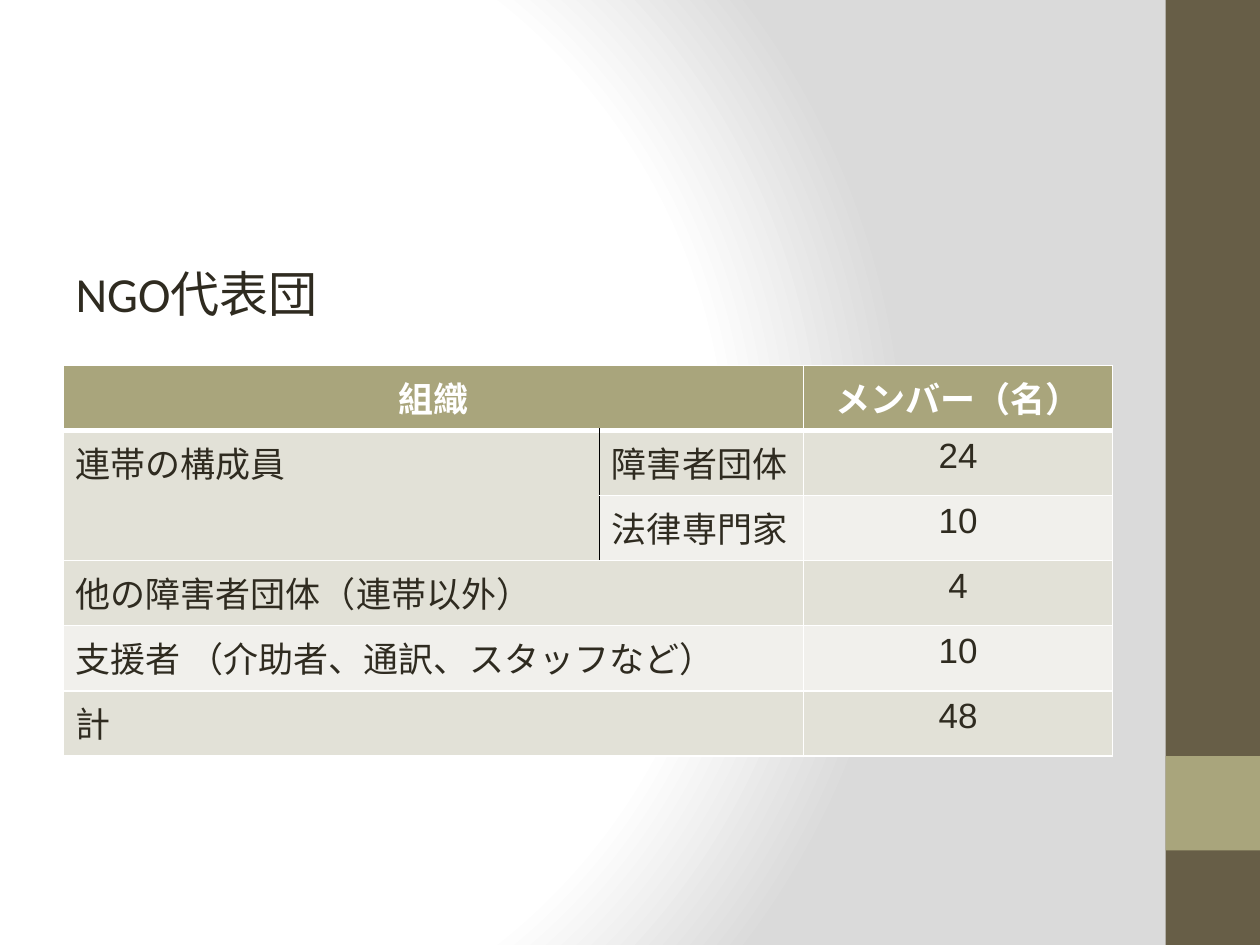
from pptx import Presentation, oxml
from pptx import util as u
from pptx.dml import color
from pptx.enum import shapes, text
from pptx.oxml import ns

COLORS = {"ink": "2F2B20", "white": "FFFFFF", "black": "000000", "edge": "DADADA",
          "brown": "675E47", "olive": "A9A57C", "dark band": "E2E1D7", "light band": "F1F0EC"}
NAMESPACE = ns.nsdecls("a", "p")


def add_run(para, words, size, font, name, bold=False):
    span = para.add_run()
    span.text = words
    span.font.size = u.Pt(size)
    span.font.name = font
    span.font.bold = bold
    span.font.color.rgb = color.RGBColor.from_string(COLORS[name])


def add_borders(cell, borders):
    properties = cell._tc.get_or_add_tcPr()
    for index, side in enumerate("LRTB"):
        name, width = borders.get(side, ("white", 1))
        properties.insert(index, oxml.parse_xml(
            f'<a:ln{side} {NAMESPACE} w="{u.Pt(width)}"><a:solidFill>'
            f'<a:srgbClr val="{COLORS[name]}"/></a:solidFill></a:ln{side}>'))


deck = Presentation()
deck.slide_width, deck.slide_height = u.Pt(720), u.Pt(540)
page = deck.slides.add_slide(deck.slide_layouts[5])

stops = "".join(f'<a:gs pos="{place * 1000}"><a:srgbClr val="{COLORS[name]}"/></a:gs>'
                for place, name in ((0, "white"), (75, "white"), (100, "edge")))
page.element.cSld.insert(0, oxml.parse_xml(
    f'<p:bg {NAMESPACE}><p:bgPr><a:gradFill rotWithShape="1"><a:gsLst>{stops}</a:gsLst>'
    '<a:path path="circle"><a:fillToRect l="20000" t="50000" r="100000" b="50000"/></a:path>'
    '</a:gradFill><a:effectLst/></p:bgPr></p:bg>'))

for top, height, name in ((0, 540, "brown"), (432, 54, "olive")):
    bar = page.shapes.add_shape(shapes.MSO_SHAPE.RECTANGLE,
                                u.Pt(666), u.Pt(top), u.Pt(54), u.Pt(height))
    bar.shadow.inherit = False
    bar.fill.solid()
    bar.fill.fore_color.rgb = color.RGBColor.from_string(COLORS[name])
    bar.line.fill.background()

title = page.shapes.title
title.left, title.top, title.width, title.height = u.Pt(36), u.Pt(147), u.Pt(178.5), u.Pt(41)
title.text_frame.word_wrap = True
title.text_frame.auto_size = text.MSO_AUTO_SIZE.NONE
title.text_frame.vertical_anchor = text.MSO_ANCHOR.TOP
heading = title.text_frame.paragraphs[0]
heading.alignment = text.PP_ALIGN.LEFT
add_run(heading, "NGO代表団", 28, "Calibri", "ink")

rows = [
    ("組織", "", "メンバー（名）"),
    ("連帯の構成員", "障害者団体", "24"),
    ("", "法律専門家", "10"),
    ("他の障害者団体（連帯以外）", "", "4"),
    ("支援者 （介助者、通訳、スタッフなど）", "", "10"),
    ("計", "", "48"),
]
widths = (306.5, 116.75, 176.5)
row_height = 37.2
table = page.shapes.add_table(len(rows), len(widths), u.Pt(36), u.Pt(208.8),
                              u.Pt(sum(widths)), u.Pt(row_height * len(rows))).table
for column, width in zip(table.columns, widths):
    column.width = u.Pt(width)

for r, row in enumerate(rows):
    table.rows[r].height = u.Pt(row_height)
    header = r == 0
    fill = "olive" if header else ("dark band" if r % 2 else "light band")
    for c, words in enumerate(row):
        cell = table.cell(r, c)
        cell.fill.solid()
        cell.fill.fore_color.rgb = color.RGBColor.from_string(COLORS[fill])
        borders = {}
        if header:
            borders["B"] = ("white", 3)
        if r == 1:
            borders["T"] = ("white", 3)
        if r in (1, 2) and c < 2:
            borders["R" if c == 0 else "L"] = ("black", 1)
        add_borders(cell, borders)
        if words:
            para = cell.text_frame.paragraphs[0]
            if header or c == 2:
                para.alignment = text.PP_ALIGN.CENTER
            add_run(para, words, 20, "Arial", "white" if header else "ink", header)

for r in (0, 3, 4, 5):
    table.cell(r, 0).merge(table.cell(r, 1))
table.cell(1, 0).merge(table.cell(2, 0))

deck.save("out.pptx")
